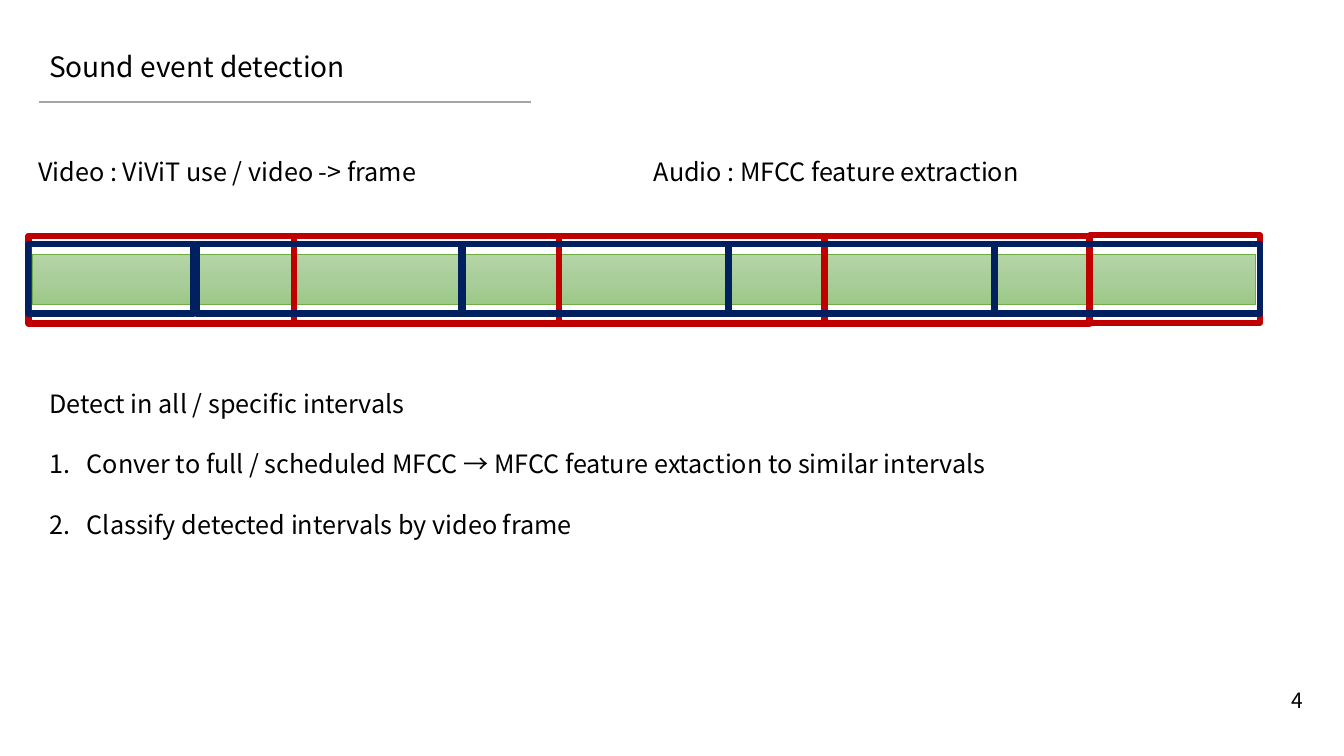
from copy import deepcopy
from dataclasses import dataclass

from pptx import Presentation
from pptx.dml.color import RGBColor
from pptx.enum import shapes, text as txt
from pptx.oxml import ns, xmlchemy as xml
from pptx.util import Pt


@dataclass(frozen=True)
class Theme:
    font: str = "Noto Sans CJK KR"
    ink: str = "000000"
    rule: str = "A5A5A5"
    edge: str = "70AD47"
    fade: tuple = ("B5D5A7", "AACE9A", "9CC987")
    red: str = "C00000"
    navy: str = "002060"
    title: float = 20
    body: float = 18
    page: float = 15


THEME = Theme()


def rgb(code):
    return RGBColor.from_string(code)


def pts(*nums):
    return [Pt(n) for n in nums]


def add_text(slide, lines, at, size=THEME.body, space=1.0,
             align=txt.PP_ALIGN.LEFT, anchor=txt.MSO_ANCHOR.TOP,
             fit=txt.MSO_AUTO_SIZE.SHAPE_TO_FIT_TEXT, first=None):
    """Place lines of text; those from index `first` on are numbered."""
    frame = slide.shapes.add_textbox(*pts(*at)).text_frame
    frame.word_wrap = True
    frame.auto_size = fit
    frame.vertical_anchor = anchor
    frame.text = "\n".join(lines)
    for i, para in enumerate(frame.paragraphs):
        para.alignment = align
        para.line_spacing = space
        font = para.runs[0].font
        font.name, font.size = THEME.font, Pt(size)
        font.color.rgb = rgb(THEME.ink)
        east = xml.OxmlElement("a:ea")
        east.set("typeface", THEME.font)
        font._element.append(east)
        if first is not None and i >= first:
            number(para)


def number(para, indent=27):
    props = para._p.get_or_add_pPr()
    props.set("marL", str(Pt(indent)))
    props.set("indent", str(-Pt(indent)))
    mark = xml.OxmlElement("a:buAutoNum")
    mark.set("type", "arabicPeriod")
    props.append(mark)


def add_rule(slide, left, right, y):
    line = slide.shapes.add_connector(
        shapes.MSO_CONNECTOR.STRAIGHT, *pts(left, y, right, y))
    line.line.color.rgb = rgb(THEME.rule)
    line.line.width = Pt(1.5)
    line._element.spPr.append(xml.OxmlElement("a:effectLst"))


def add_box(slide, at, color, width):
    box = slide.shapes.add_shape(shapes.MSO_SHAPE.RECTANGLE, *pts(*at))
    box.shadow.inherit = False
    box.fill.background()
    box.line.color.rgb = rgb(color)
    box.line.width = Pt(width)
    return box


def add_track(slide, at):
    """Draw the green bar with its three-stop vertical fade."""
    bar = add_box(slide, at, THEME.edge, 0.5)
    bar.fill.gradient()
    bar.fill.gradient_angle = 270
    stop = bar._element.spPr.find(".//" + ns.qn("a:gs"))
    stop.addnext(deepcopy(stop))
    for i, (stop, color) in enumerate(zip(bar.fill.gradient_stops, THEME.fade)):
        stop.position = i / 2
        stop.color.rgb = rgb(color)


def add_frames(slide, left, top, pitch, height, count, color):
    for i in range(count):
        add_box(slide, (left + i * pitch, top, 189.4, height), color, 4.5)


def main():
    deck = Presentation()
    deck.slide_width, deck.slide_height = pts(960, 540)
    slide = deck.slides.add_slide(deck.slide_layouts[6])

    add_text(slide, ["Sound event detection"], (28, 31.5, 904, 31.5),
             size=THEME.title)
    add_rule(slide, 28, 379.5, 73)
    add_text(slide, ["4"], (895.7, 486, 42.5, 28.8), size=THEME.page,
             align=txt.PP_ALIGN.RIGHT, anchor=txt.MSO_ANCHOR.MIDDLE,
             fit=txt.MSO_AUTO_SIZE.NONE)
    add_text(slide, ["Video : ViViT use / video -> frame"],
             (20.2, 97.2, 424, 36), space=1.5)
    add_text(slide, ["Audio : MFCC feature extraction"],
             (460, 97.2, 409, 36), space=1.5)

    add_track(slide, (23, 181.4, 874, 36))
    add_frames(slide, 20.4, 168.5, 189.5, 62.6, 4, THEME.red)
    add_box(slide, (778.4, 168, 121.6, 62.6), THEME.red, 4.5)
    add_frames(slide, 140.4, 174.2, 190.1, 49.7, 4, THEME.navy)
    add_box(slide, (20.2, 174.2, 118, 49.7), THEME.navy, 4.5)

    add_text(slide, [
        "Detect in all / specific intervals",
        "Conver to full / scheduled MFCC → MFCC feature extaction to similar intervals",
        "Classify detected intervals by video frame",
    ], (28, 252, 828, 131), space=2.0, first=1)

    deck.save("out.pptx")


if __name__ == "__main__":
    main()
